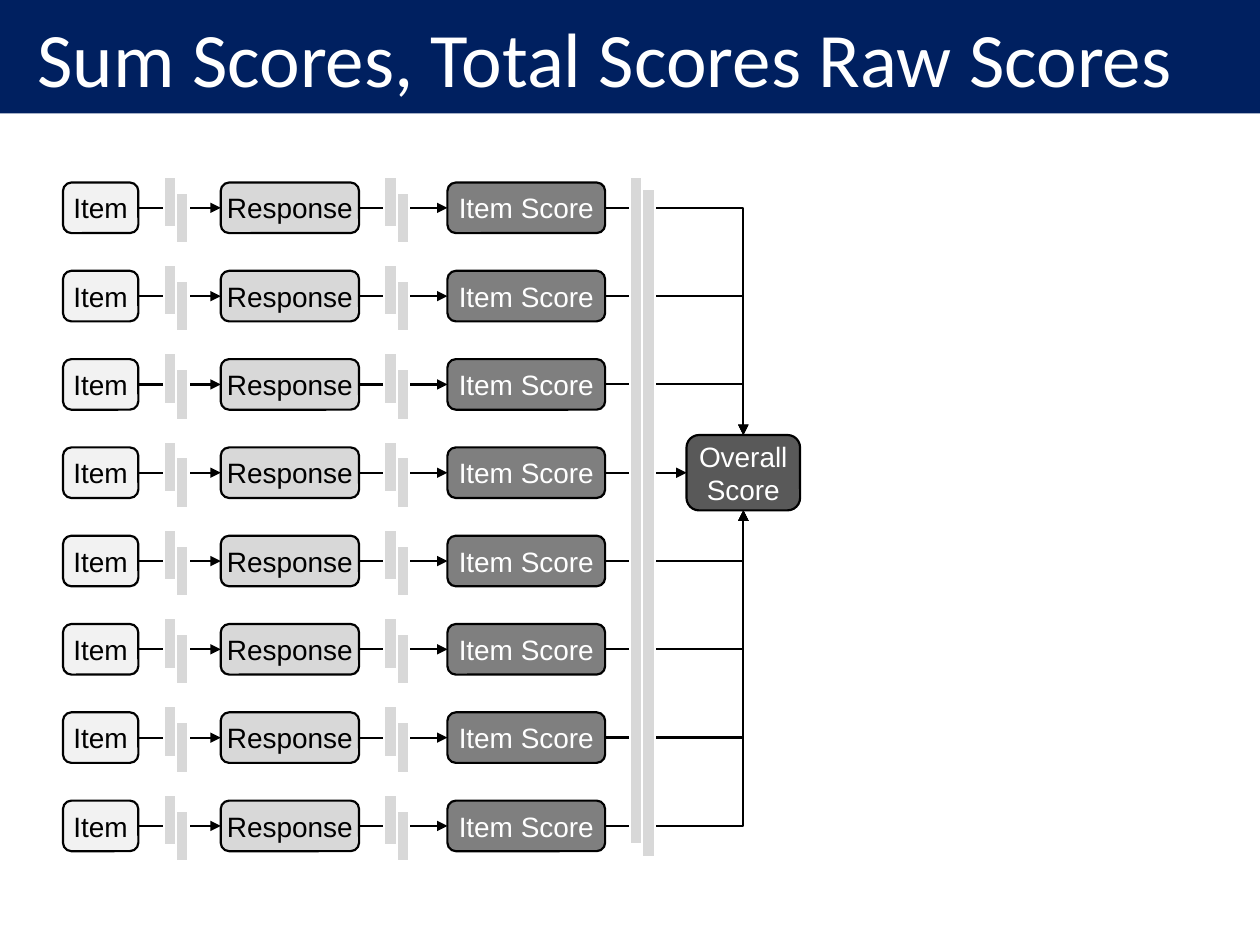
from lxml import etree
from pptx import Presentation, util as u
from pptx.dml.color import RGBColor
from pptx.enum import shapes as sh, text as tx
from pptx.oxml import ns

HUE = {"navy": "002060", "white": "FFFFFF", "black": "000000", "pale": "F2F2F2",
       "light": "D8D8D8", "mid": "7F7F7F", "dark": "595959"}
KIND, LINK = sh.MSO_SHAPE, sh.MSO_CONNECTOR
TOP, LEFT, BASE, RIGHT = range(4)
ROWS, PITCH, MID = 8, 1.78, 4.19  # row count, row step, middle of first row
TALL = 1.02                       # height of row boxes and short bars

deck = Presentation()
deck.slide_width, deck.slide_height = u.Cm(25.4), u.Cm(19.05)
page = deck.slides.add_slide(deck.slide_layouts[6])


def box(words, x, y, w, h, kind=KIND.ROUNDED_RECTANGLE, fill="light", edge="black",
        ink="black", size=16, font="Arial", align=tx.PP_ALIGN.CENTER, pad=0):
    item = page.shapes.add_shape(kind, u.Cm(x), u.Cm(y), u.Cm(w), u.Cm(h))
    item.shadow.inherit = False
    item.fill.solid()
    item.fill.fore_color.rgb = RGBColor.from_string(HUE[fill])
    if edge:
        item.line.color.rgb = RGBColor.from_string(HUE[edge])
        item.line.width = u.Pt(1.25)
    else:
        item.line.fill.background()
    if not words:
        return item
    frame = item.text_frame
    frame.word_wrap = True
    frame.vertical_anchor = tx.MSO_ANCHOR.MIDDLE
    frame.margin_left = u.Cm(pad)
    frame.margin_right = frame.margin_top = frame.margin_bottom = 0
    frame.text = words
    for para in frame.paragraphs:
        para.alignment = align
        para.font.size, para.font.name = u.Pt(size), font
        para.font.color.rgb = RGBColor.from_string(HUE[ink])
    return item


def link(start, end, side=LEFT):
    kind = LINK.STRAIGHT if side == LEFT else LINK.ELBOW
    wire = page.shapes.add_connector(kind, 0, 0, 0, 0)
    wire.begin_connect(start, RIGHT)
    wire.end_connect(end, side)
    wire.line.color.rgb = RGBColor.from_string(HUE["black"])
    wire.line.width = u.Pt(1.25)
    props = wire._element.spPr
    if kind == LINK.ELBOW:  # a single bend
        props.find(ns.qn("a:prstGeom")).set("prst", "bentConnector2")
    etree.SubElement(wire.line._get_or_add_ln(), ns.qn("a:tailEnd"), type="triangle")
    etree.SubElement(props, ns.qn("a:effectLst"))


# Title band
box("Sum Scores, Total Scores Raw Scores", 0, 0, 25.4, 2.29, kind=KIND.RECTANGLE,
    fill="navy", edge=None, ink="white", size=44, font="Calibri",
    align=tx.PP_ALIGN.LEFT, pad=0.76)

# Overall score, level with the fourth row
goal = box("Overall\nScore", 13.84, 8.77, 2.29, 1.52, fill="dark", ink="white")

# Rows: item, response, item score
steps = [("Item", 1.27, 1.52, "pale", "black"),
         ("Response", 4.45, 2.79, "light", "black"),
         ("Item Score", 9.02, 3.18, "mid", "white")]
bars = []
for row in range(ROWS):
    mid = MID + row * PITCH
    chain = [box(words, x, mid - TALL / 2, w, TALL, fill=fill, ink=ink)
             for words, x, w, fill, ink in steps]
    for start, end in zip(chain, chain[1:]):
        link(start, end)
    link(chain[-1], goal, TOP if row < 3 else LEFT if row == 3 else BASE)
    bars += [(x, mid - 0.63, TALL, 0.32) for x in (3.3, 7.75)]

# Paired bars that break the lines
bars.append((12.7, 3.56, 13.46, 0.25))
for x, y, high, drop in bars:
    for num in range(2):
        box("", x + num * 0.25, y + num * drop, 0.25, high,
            kind=KIND.FLOWCHART_PROCESS, edge="white")

deck.save("out.pptx")
